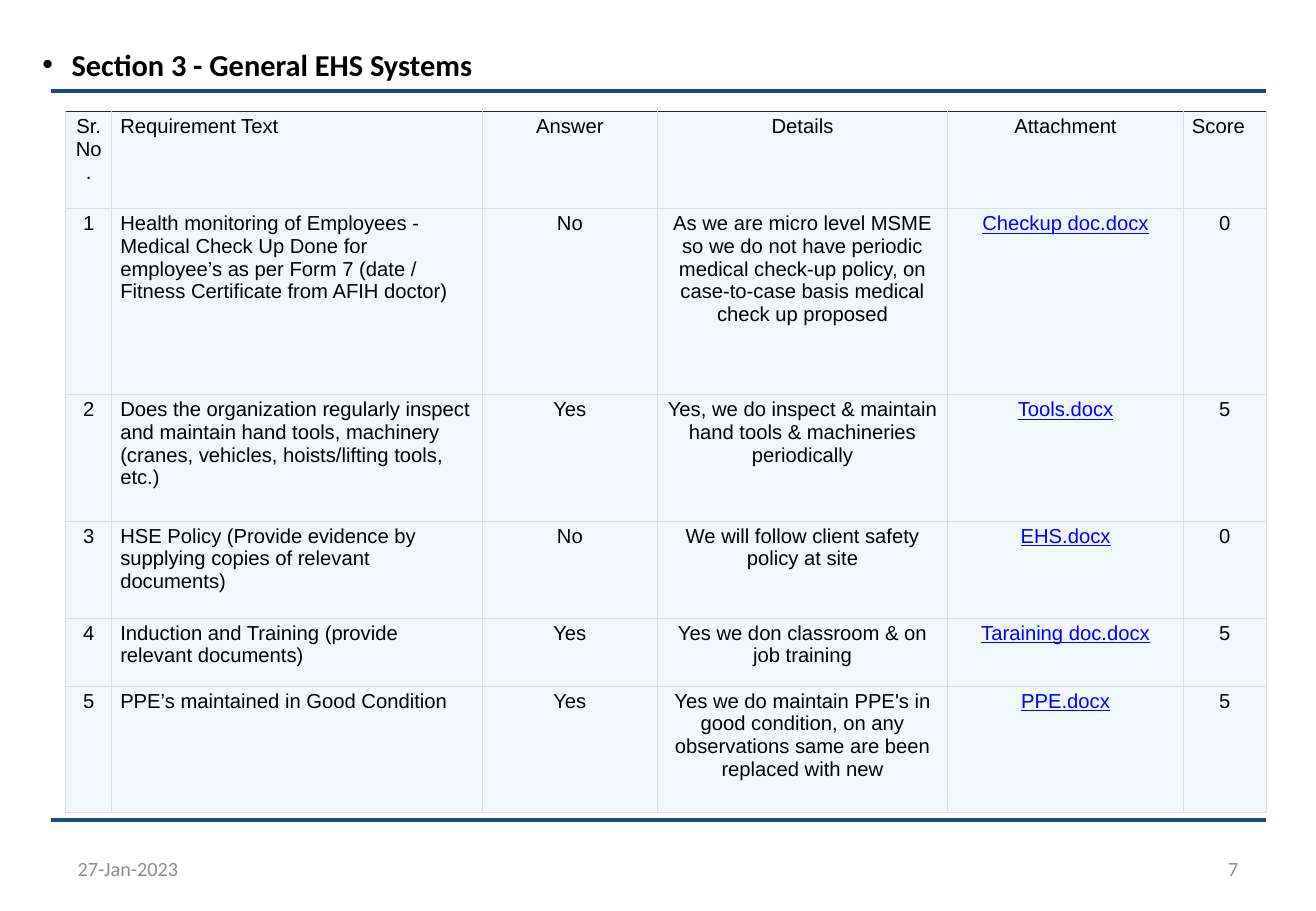
from lxml import etree
from pptx import Presentation
from pptx.dml.color import RGBColor
from pptx.enum.shapes import MSO_CONNECTOR
from pptx.enum.text import MSO_ANCHOR, PP_ALIGN
from pptx.oxml.ns import qn
from pptx.util import Inches, Pt

LINE = MSO_CONNECTOR.STRAIGHT
TOP, MIDDLE = MSO_ANCHOR.TOP, MSO_ANCHOR.MIDDLE
LEFT, CENTER, RIGHT = PP_ALIGN.LEFT, PP_ALIGN.CENTER, PP_ALIGN.RIGHT

NAVY = RGBColor(0x1F, 0x49, 0x7D)
BLACK = RGBColor(0, 0, 0)
GRAY = RGBColor(0x8C, 0x8C, 0x8C)
BLUE = RGBColor(0, 0, 0xFF)
PALE = RGBColor(0xF1, 0xF8, 0xFB)
GRID = RGBColor(0xDD, 0xDD, 0xDD)
EDGE = RGBColor(0x50, 0x0B, 0x4B)

COLS = [0.38, 3.05, 1.44, 2.39, 1.94, 0.68]
ROWS = [0.8, 1.53, 1.04, 0.8, 0.56, 1.04]
TEXT_COL, LINK_COL, SCORE_COL = 1, 4, 5
DATA = [
    ("Sr.No.", "Requirement Text", "Answer", "Details", "Attachment", "Score"),
    ("1", "Health monitoring of Employees - Medical Check Up Done for "
     "employee’s as per Form 7 (date / Fitness Certificate from AFIH doctor)",
     "No", "As we are micro level MSME so we do not have periodic medical "
     "check-up policy, on case-to-case basis medical check up proposed",
     "Checkup doc.docx", "0"),
    ("2", "Does the organization regularly inspect and maintain hand tools, "
     "machinery (cranes, vehicles, hoists/lifting tools, etc.)",
     "Yes", "Yes, we do inspect & maintain hand tools & machineries periodically",
     "Tools.docx", "5"),
    ("3", "HSE Policy (Provide evidence by supplying copies of relevant documents)",
     "No", "We will follow client safety policy at site", "EHS.docx", "0"),
    ("4", "Induction and Training (provide relevant documents)",
     "Yes", "Yes we don classroom & on job training", "Taraining doc.docx", "5"),
    ("5", "PPE’s maintained in Good Condition",
     "Yes", "Yes we do maintain PPE's in good condition, on any observations "
     "same are been replaced with new", "PPE.docx", "5"),
]


def style(para, name, size, color, align=LEFT):
    para.alignment = align
    para.font.name = name
    para.font.size = Pt(size)
    para.font.color.rgb = color


def add_text(slide, box, text, anchor=TOP):
    frame = slide.shapes.add_textbox(*map(Inches, box)).text_frame
    frame.word_wrap = True
    frame.vertical_anchor = anchor
    para = frame.paragraphs[0]
    para.text = text
    return para


def add_rule(slide, left, top, width):
    rule = slide.shapes.add_connector(
        LINE, *map(Inches, (left, top, left + width, top)))
    rule.line.color.rgb = NAVY
    rule.line.width = Pt(2.25)
    etree.SubElement(rule._element.spPr, qn("a:effectLst"))


def add_title(slide, box, text):
    para = add_text(slide, box, text)
    props = para._p.get_or_add_pPr()
    props.set("marL", str(Inches(0.24)))
    props.set("indent", str(-Inches(0.24)))
    etree.SubElement(props, qn("a:buFont"), typeface="Arial")
    etree.SubElement(props, qn("a:buChar"), char="•")
    style(para, "Calibri", 18, BLACK)
    para.font.bold = True


def set_edges(cell, top):
    props = cell._tc.get_or_add_tcPr()
    sides = {"lnL": GRID, "lnR": GRID, "lnT": top, "lnB": GRID}
    for spot, (side, color) in enumerate(sides.items()):
        edge = etree.Element(qn("a:" + side), w=str(Pt(0.75)))
        fill = etree.SubElement(edge, qn("a:solidFill"))
        etree.SubElement(fill, qn("a:srgbClr"), val=str(color))
        props.insert(spot, edge)


def fill_cell(cell, row, col):
    cell.margin_left = cell.margin_right = Inches(0.07)
    cell.margin_top = cell.margin_bottom = Inches(0.03)
    cell.fill.solid()
    cell.fill.fore_color.rgb = PALE
    set_edges(cell, GRID if row else EDGE)
    para = cell.text_frame.paragraphs[0]
    para.text = DATA[row][col]
    is_link = row > 0 and col == LINK_COL
    is_left = col == TEXT_COL or (row == 0 and col == SCORE_COL)
    style(para, "Arial", 12, BLUE if is_link else BLACK,
          LEFT if is_left else CENTER)
    para.font.bold = False
    if is_link:
        # Underline sits on the run so that it always shows
        para.runs[0].font.underline = True


def add_grid(slide, left, top):
    table = slide.shapes.add_table(
        len(ROWS), len(COLS), Inches(left), Inches(top),
        Inches(sum(COLS)), Inches(sum(ROWS))).table
    table.first_row = table.horz_banding = False
    for col, width in zip(table.columns, COLS):
        col.width = Inches(width)
    for row, height in zip(table.rows, ROWS):
        row.height = Inches(height)
    for row in range(len(ROWS)):
        for col in range(len(COLS)):
            fill_cell(table.cell(row, col), row, col)


def add_footer(slide, left, top, width, height):
    part = 2.53
    date = add_text(slide, (left, top, part, height), "27-Jan-2023", MIDDLE)
    style(date, "Calibri", 12, GRAY)
    page = add_text(slide, (left + width - part, top, part, height), "7", MIDDLE)
    style(page, "Calibri", 12, GRAY, RIGHT)


def main():
    deck = Presentation()
    deck.slide_width, deck.slide_height = Inches(10.83), Inches(7.5)
    slide = deck.slides.add_slide(deck.slide_layouts[6])
    # Frame rules
    for top in (0.75, 6.75):
        add_rule(slide, 0.42, top, 10)
    # Content
    add_footer(slide, 0.54, 6.95, 9.75, 0.4)
    add_title(slide, (0.25, 0.33, 5.11, 0.4), "Section 3 - General EHS Systems")
    add_grid(slide, 0.54, 0.92)
    deck.save("out.pptx")


if __name__ == "__main__":
    main()
